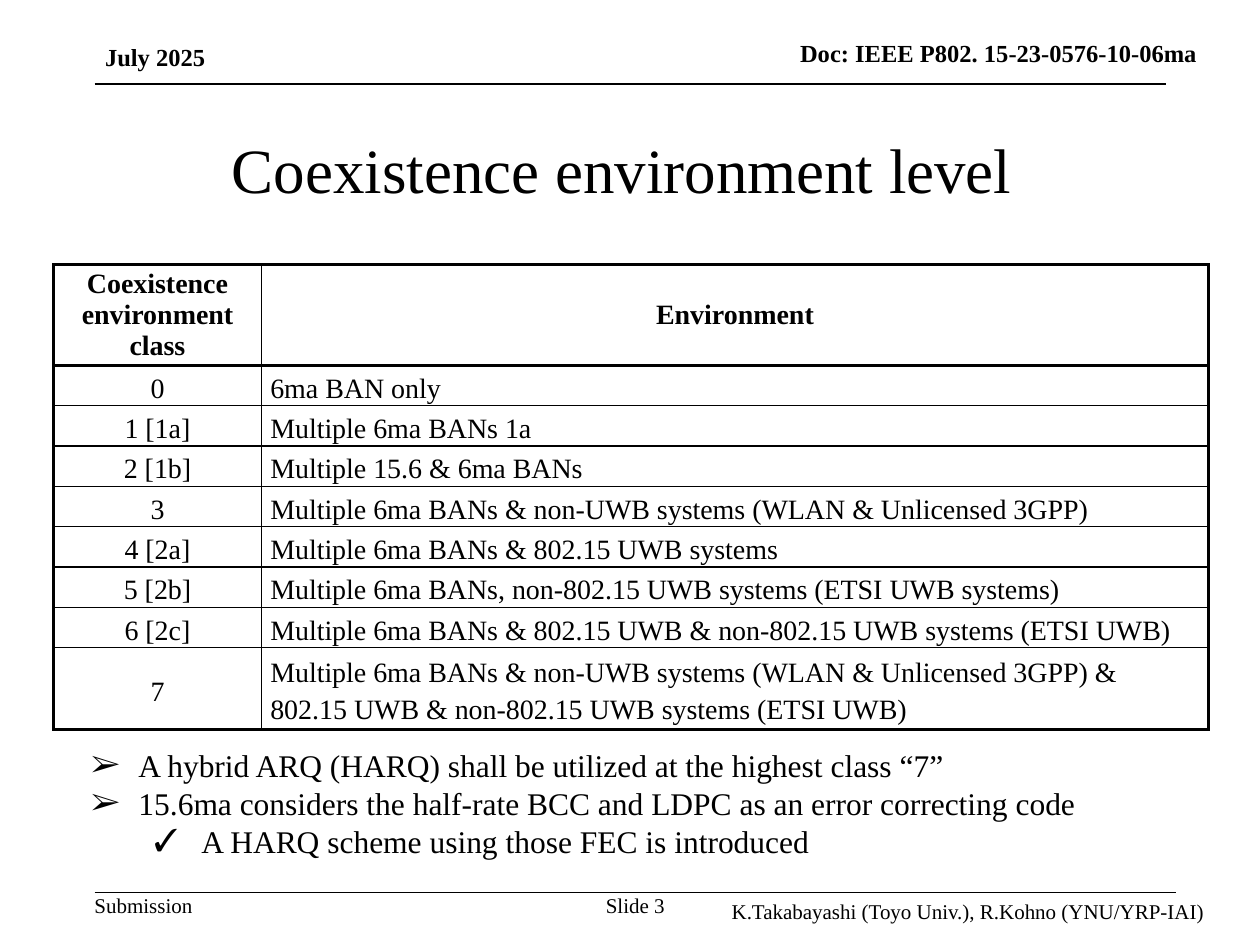
"""Build the slide on coexistence environment levels for body area networks."""
import pptx
import pptx.dml.color
import pptx.enum.shapes
import pptx.enum.text
import pptx.oxml.ns
import pptx.util
import lxml.etree

COLORS = {"ink": "000000", "paper": "FFFFFF"}
FONT = "Times New Roman"
ALIGN = pptx.enum.text.PP_ALIGN
ANCHOR = pptx.enum.text.MSO_ANCHOR

presentation = pptx.Presentation()
presentation.slide_width = pptx.util.Inches(10)
presentation.slide_height = pptx.util.Inches(7.5)
slide = presentation.slides.add_slide(presentation.slide_layouts[6])
unit = presentation.slide_width / 120
ink = pptx.dml.color.RGBColor.from_string(COLORS["ink"])
paper = pptx.dml.color.RGBColor.from_string(COLORS["paper"])


def grid(*counts):
    return [round(count * unit) for count in counts]


def write(paragraph, text, size, bold=False, alignment=ALIGN.LEFT):
    paragraph.alignment = alignment
    run = paragraph.add_run()
    run.text = text
    run.font.name = FONT
    run.font.size = pptx.util.Pt(size)
    run.font.bold = bold
    run.font.color.rgb = ink


for left, right, top in [(9, 111, 8), (9, 112, 85)]:
    rule = slide.shapes.add_connector(
        pptx.enum.shapes.MSO_CONNECTOR.STRAIGHT, *grid(left, top, right, top))
    rule.line.color.rgb = ink
    rule.line.width = pptx.util.Pt(1)
    lxml.etree.SubElement(rule._element.spPr, pptx.oxml.ns.qn("a:effectLst"))

labels = [
    ("Submission", (9, 85, 12, 2.4), 12, False, ALIGN.LEFT, ANCHOR.TOP, (0, 0)),
    ("Doc: IEEE P802. 15-23-0576-10-06ma", (50.5, 3, 64.7, 4.1), 14, True, ALIGN.RIGHT, ANCHOR.TOP, (1.2, 0.6)),
    ("Coexistence environment level ", (9, 9, 102, 14), 36, False, ALIGN.CENTER, ANCHOR.MIDDLE, (1.2, 0.6)),
    ("Slide 3", (56, 85, 9, 2.4), 12, False, ALIGN.CENTER, ANCHOR.TOP, (0, 0)),
    ("July 2025", (10, 4, 21, 2.8), 14, True, ALIGN.LEFT, ANCHOR.BOTTOM, (0, 0)),
    ("K.Takabayashi (Toyo Univ.), R.Kohno (YNU/YRP-IAI)", (68.5, 85, 50, 4), 12, False, ALIGN.LEFT, ANCHOR.TOP, (1.2, 0.6)),
]
for text, place, size, bold, alignment, anchor, inset in labels:
    frame = slide.shapes.add_textbox(*grid(*place)).text_frame
    frame.word_wrap = True
    frame.vertical_anchor = anchor
    frame.margin_left, frame.margin_top = frame.margin_right, frame.margin_bottom = grid(*inset)
    write(frame.paragraphs[0], text, size, bold, alignment)

points = [
    (10.5, "➢", "A hybrid ARQ (HARQ) shall be utilized at the highest class “7”"),
    (10.5, "➢", "15.6ma considers the half-rate BCC and LDPC as an error correcting code"),
    (16.5, "✓", "A HARQ scheme using those FEC is introduced"),
]
frame = slide.shapes.add_textbox(*grid(1.5, 70.5, 113.7, 12.1)).text_frame
frame.word_wrap = True
for index, (indent, bullet, text) in enumerate(points):
    paragraph = frame.add_paragraph() if index else frame.paragraphs[0]
    write(paragraph, text, 18)
    properties = paragraph._p.get_or_add_pPr()
    margin, hanging = grid(indent, -4.5)
    properties.set("marL", str(margin))
    properties.set("indent", str(hanging))
    lxml.etree.SubElement(properties, pptx.oxml.ns.qn("a:buFont"), typeface=FONT)
    lxml.etree.SubElement(properties, pptx.oxml.ns.qn("a:buChar"), char=bullet)

rows = [
    ("Coexistence environment class", "Environment"),
    ("0", "6ma BAN only"),
    ("1 [1a]", "Multiple 6ma BANs 1a"),
    ("2 [1b]", "Multiple 15.6 & 6ma BANs"),
    ("3", "Multiple 6ma BANs & non-UWB systems (WLAN & Unlicensed 3GPP)"),
    ("4 [2a]", "Multiple 6ma BANs & 802.15 UWB systems"),
    ("5 [2b]", "Multiple 6ma BANs, non-802.15 UWB systems (ETSI UWB systems)"),
    ("6 [2c]", "Multiple 6ma BANs & 802.15 UWB & non-802.15 UWB systems (ETSI UWB)"),
    ("7", "Multiple 6ma BANs & non-UWB systems (WLAN & Unlicensed 3GPP) & 802.15 UWB & non-802.15 UWB systems (ETSI UWB)"),
]
last = len(rows) - 1
heights = grid(9.6, *[3.84] * (last - 1), 7.8)
table = slide.shapes.add_table(len(rows), 2, *grid(5.1, 25.2, 110), sum(heights)).table
for column, width in zip(table.columns, grid(19.8, 90.2)):
    column.width = width
for row_index, texts in enumerate(rows):
    table.rows[row_index].height = heights[row_index]
    for column_index, text in enumerate(texts):
        cell = table.cell(row_index, column_index)
        cell.vertical_anchor = ANCHOR.MIDDLE
        cell.margin_left = cell.margin_right = pptx.util.Inches(0.07)
        cell.margin_top = cell.margin_bottom = 0
        header = row_index == 0
        paragraph = cell.text_frame.paragraphs[0]
        write(paragraph, text, 16, header, ALIGN.CENTER if header or column_index == 0 else ALIGN.LEFT)
        if not header:
            paragraph.line_spacing = 1.2
            paragraph.space_before = paragraph.space_after = pptx.util.Pt(2)
        heavy = {
            "L": column_index == 0,
            "R": column_index == 1,
            "T": row_index <= 1,
            "B": row_index in (0, last),
        }
        for side, is_heavy in heavy.items():
            border = lxml.etree.SubElement(
                cell._tc.get_or_add_tcPr(), pptx.oxml.ns.qn("a:ln" + side),
                w=str(pptx.util.Pt(1.5 if is_heavy else 1)))
            fill = lxml.etree.SubElement(border, pptx.oxml.ns.qn("a:solidFill"))
            lxml.etree.SubElement(fill, pptx.oxml.ns.qn("a:srgbClr"), val=COLORS["ink"])
        cell.fill.solid()
        cell.fill.fore_color.rgb = paper

presentation.save("out.pptx")
